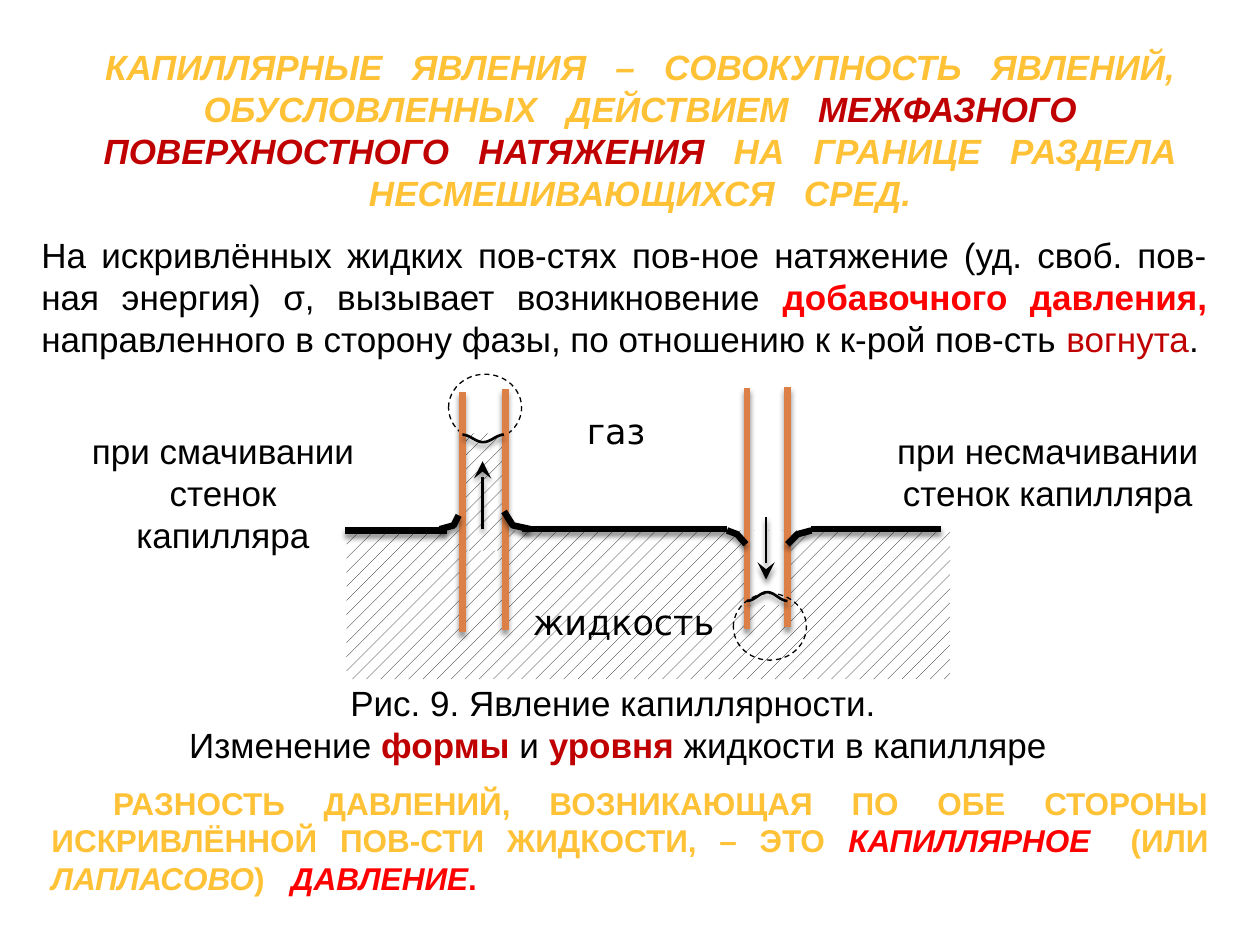
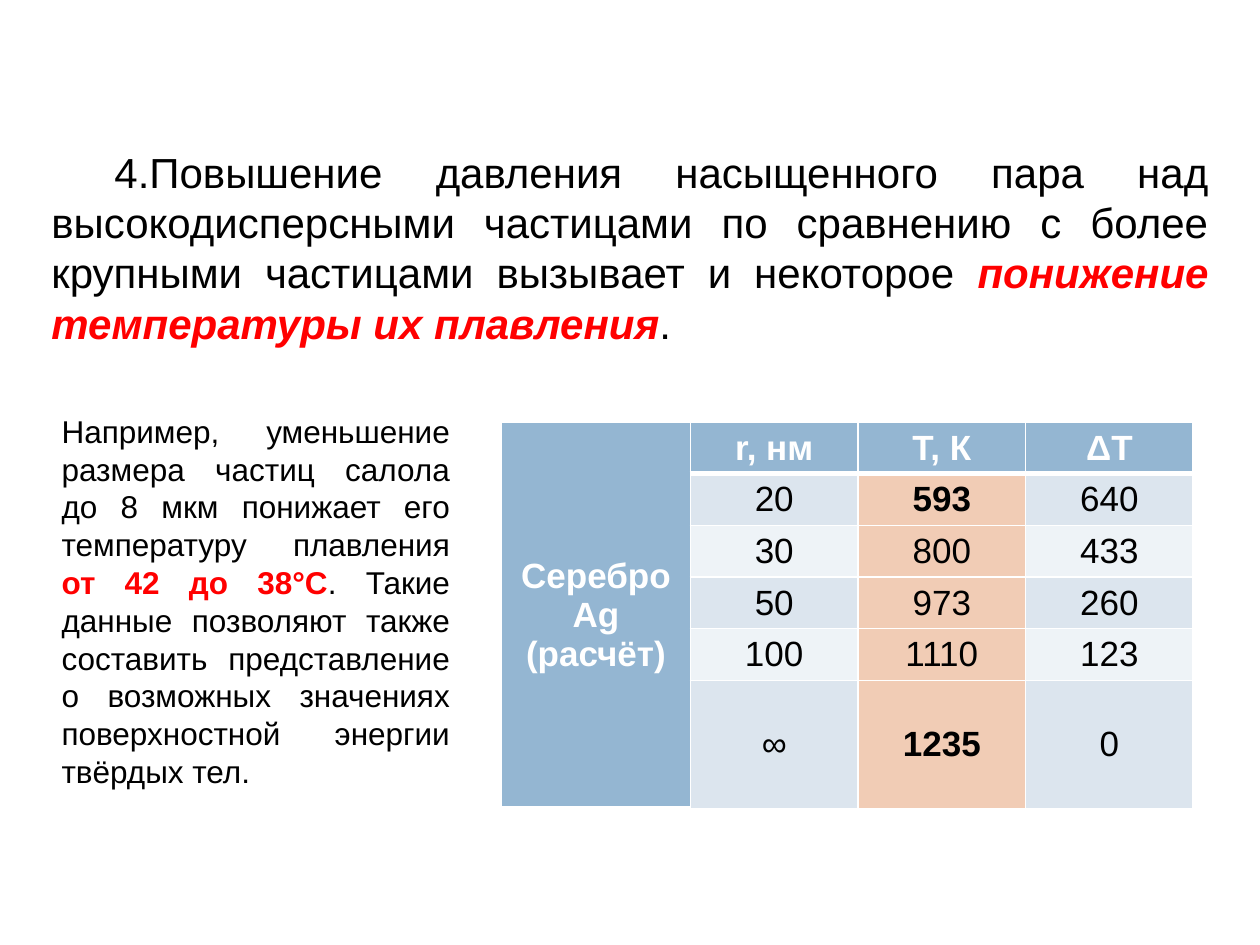
from math import pi, sin

from lxml.etree import SubElement
from pptx import Presentation
from pptx.dml.color import RGBColor
from pptx.enum.dml import MSO_LINE_DASH_STYLE as DASH, MSO_PATTERN_TYPE as PATTERN
from pptx.enum.shapes import MSO_CONNECTOR as CONNECTOR, MSO_SHAPE as SHAPE
from pptx.enum.text import MSO_ANCHOR as ANCHOR, MSO_AUTO_SIZE as AUTO_SIZE, PP_ALIGN as ALIGN
from pptx.oxml.ns import qn
from pptx.util import Emu, Pt

EMU_PER_PX = 9144  # 100 px to the inch
TITLE_ONLY, BLANK = 5, 6
WIDE_GAP = "_"  # stands for a space widened by character spacing

COLORS = {
    "black": "000000", "white": "FFFFFF", "gold": "FFC135",
    "red": "FF0000", "crimson": "C00000", "tube": "DD8047",
    "header": "94B6D2", "band": "DCE5EE", "light": "EEF3F7", "accent": "F1CCB5",
}

RUN_STYLES = {
    "plain": {"color": "black"},
    "strong": {"color": "black", "bold": True},
    "header": {"color": "white", "bold": True},
    "gold": {"color": "gold", "bold": True},
    "gold italic": {"color": "gold", "bold": True, "italic": True},
    "red": {"color": "red", "bold": True},
    "red italic": {"color": "red", "bold": True, "italic": True},
    "crimson": {"color": "crimson"},
    "crimson bold": {"color": "crimson", "bold": True},
    "crimson italic": {"color": "crimson", "bold": True, "italic": True},
}


def px(length):
    return Emu(round(length * EMU_PER_PX))


def rgb(name):
    return RGBColor.from_string(COLORS[name])


def apply(target, values):
    for name, value in values.items():
        setattr(target, name, value)


class SlideBuilder:
    """Holds the shared style and the slide being drawn."""

    font = "Arial"

    def __init__(self):
        self.presentation = Presentation()
        apply(self.presentation, {"slide_width": px(1000), "slide_height": px(750)})
        self.slide = None

    def new_slide(self, layout):
        layouts = self.presentation.slide_layouts
        self.slide = self.presentation.slides.add_slide(layouts[layout])

    def add_run(self, paragraph, text, style, size, font):
        run = paragraph.add_run()
        run.text = text
        values = dict(RUN_STYLES[style])
        run.font.color.rgb = rgb(values.pop("color"))
        apply(run.font, {"name": font, "size": Pt(size), **values})
        return run

    def fill_text(self, frame, runs, size=20, align=ALIGN.CENTER, font=font, indent=0, number=None):
        """Fill a text frame from (text, style) pairs; a newline text is a line break."""
        paragraph = frame.paragraphs[0]
        paragraph.alignment = align
        for text, style in runs:
            if text == "\n":
                paragraph.add_line_break()
                continue
            for index, piece in enumerate(text.split(WIDE_GAP)):
                if index:
                    gap = self.add_run(paragraph, " ", style, size, font)
                    gap.font._element.set("spc", str(round(size * 55.6)))
                if piece:
                    self.add_run(paragraph, piece, style, size, font)
        if indent:
            properties = paragraph._p.get_or_add_pPr()
            properties.set("marL", "0")
            properties.set("indent", str(px(indent)))
            if number:
                SubElement(properties, qn("a:buFont"), typeface=font)
                SubElement(properties, qn("a:buAutoNum"), type="arabicPeriod", startAt=str(number))

    def title(self, box, runs):
        shape = self.slide.shapes.title
        apply(shape, dict(zip(("left", "top", "width", "height"), map(px, box))))
        apply(shape.text_frame, {"word_wrap": True, "auto_size": AUTO_SIZE.NONE,
                                 "vertical_anchor": ANCHOR.TOP})
        self.fill_text(shape.text_frame, runs)

    def text(self, box, runs, **options):
        shape = self.slide.shapes.add_textbox(*map(px, box))
        shape.text_frame.word_wrap = True
        self.fill_text(shape.text_frame, runs, **options)

    def area(self, kind, box, fill=None, hatched=False, dashed=False):
        shape = self.slide.shapes.add_shape(kind, *map(px, box))
        shape.shadow.inherit = False
        if hatched:
            shape.fill.patterned()
            shape.fill.pattern = PATTERN.PERCENT_10
            shape.fill.fore_color.rgb = rgb("black")
            shape.fill.back_color.rgb = rgb("white")
        elif fill:
            shape.fill.solid()
            shape.fill.fore_color.rgb = rgb(fill)
        else:
            shape.fill.background()
        if dashed:
            shape.line.color.rgb = rgb("black")
            apply(shape.line, {"width": Pt(0.75), "dash_style": DASH.DASH})
        else:
            shape.line.fill.background()

    def stroke(self, shape, color, width, arrow=False):
        """Format a line with the soft shadow below it."""
        shape.line.color.rgb = rgb(color)
        shape.line.width = Pt(width)
        if arrow:
            SubElement(shape.line._get_or_add_ln(), qn("a:tailEnd"), type="stealth", w="lg", len="lg")
        effects = SubElement(shape._element.spPr, qn("a:effectLst"))
        shadow = SubElement(effects, qn("a:outerShdw"), blurRad=str(Pt(3)), dist=str(Pt(2.4)),
                            dir="5400000", rotWithShape="0")
        shade = SubElement(shadow, qn("a:srgbClr"), val=COLORS["black"])
        SubElement(shade, qn("a:alpha"), val="45000")

    def line(self, start, end, color="black", width=3.75, arrow=False):
        connector = self.slide.shapes.add_connector(
            CONNECTOR.STRAIGHT, *map(px, start + end))
        self.stroke(connector, color, width, arrow)

    def outline(self, points, width=3.75):
        start, *others = [(px(x), px(y)) for x, y in points]
        builder = self.slide.shapes.build_freeform(*start)
        builder.add_line_segments(others, close=False)
        shape = builder.convert_to_shape()
        shape.fill.background()
        self.stroke(shape, "black", width)

    def meniscus(self, left, right, edge, tip, steps=16):
        """Draw the curved liquid surface between two tube walls."""
        self.outline([(left + (right - left) * step / steps,
                       edge + (tip - edge) * sin(pi * step / steps) ** 2)
                      for step in range(steps + 1)], width=1.5)

    def cell(self, cell, fill, text="", style="plain", bottom=1):
        properties = cell._tc.get_or_add_tcPr()
        for side, width in (("L", 1), ("R", 1), ("T", 1), ("B", bottom)):
            border = SubElement(properties, qn(f"a:ln{side}"), w=str(Pt(width)))
            solid = SubElement(border, qn("a:solidFill"))
            SubElement(solid, qn("a:srgbClr"), val=COLORS["white"])
        cell.fill.solid()
        cell.fill.fore_color.rgb = rgb(fill)
        apply(cell, {"vertical_anchor": ANCHOR.MIDDLE, "margin_top": px(4), "margin_bottom": px(4)})
        if text:
            self.fill_text(cell.text_frame, [(text, style)])

    def table(self, box, widths, heights, side_header, header, rows, strong):
        """Draw a table whose first column is one merged header cell."""
        table = self.slide.shapes.add_table(len(heights), len(widths), *map(px, box)).table
        table.horz_banding = False
        for column, width in zip(table.columns, widths):
            column.width = px(width)
        for row, height in zip(table.rows, heights):
            row.height = px(height)
        table.cell(0, 0).merge(table.cell(len(rows), 0))
        for row_index, values in enumerate([header] + rows):
            is_header = row_index == 0
            self.cell(table.cell(row_index, 0), "header",
                      side_header if is_header else "", "header", bottom=3)
            for column_index, value in enumerate(values, 1):
                cell = table.cell(row_index, column_index)
                if is_header:
                    self.cell(cell, "header", value, "header", bottom=3)
                    continue
                band = "band" if row_index % 2 else "light"
                self.cell(cell, "accent" if column_index == 2 else band, value,
                          "strong" if value in strong else "plain")


def draw_capillaries(builder):
    builder.area(SHAPE.OVAL, (356, 297, 58, 53), fill="white", dashed=True)
    builder.area(SHAPE.RECTANGLE, (275, 421, 479, 118), hatched=True)
    for left, right, level in ((274, 355, 421), (414, 577, 420), (644, 747, 420)):
        builder.line((left, level), (right, level))

    builder.area(SHAPE.RECTANGLE, (593, 421, 32, 59), fill="white")
    builder.area(SHAPE.RECTANGLE, (365, 344, 36, 93), hatched=True)
    for wall, top in ((593, 308), (625, 307), (367, 311), (401, 309)):
        builder.line((wall, top), (wall, top + 191), color="tube")
    builder.meniscus(593, 625, edge=477, tip=470)
    builder.meniscus(367, 400, edge=345, tip=351)

    for label, box in (("жидкость", (401, 472, 188, 46)), ("газ", (445, 320, 88, 54))):
        builder.text(box, [(label, "plain")], font="DejaVu Sans")
    for bend in (
        [(400, 406), (407, 417), (421, 420)],
        [(577, 421), (585, 424), (592, 432)],
        [(625, 432), (633, 424), (644, 421)],
        [(349, 420), (360, 417), (364, 409)],
    ):
        builder.outline(bend)

    builder.area(SHAPE.OVAL, (582, 471, 58, 53), dashed=True)
    for x, start, end in ((383, 420, 366), (608, 410, 460)):
        builder.line((x, start), (x, end), width=1.5, arrow=True)
    for label, box in (("при смачивании стенок капилляра", (55, 336, 244, 77)),
                       ("при несмачивании стенок капилляра", (702, 336, 259, 77))):
        builder.text(box, [(label, "plain")])


def capillarity_slide(builder):
    builder.new_slide(TITLE_ONLY)
    builder.title((43, 31, 930, 145), [
        ("КАПИЛЛЯРНЫЕ_ЯВЛЕНИЯ_–_СОВОКУПНОСТЬ_ЯВЛЕНИЙ, ОБУСЛОВЛЕННЫХ_ДЕЙСТВИЕМ_", "gold italic"),
        ("МЕЖФАЗНОГО ПОВЕРХНОСТНОГО_НАТЯЖЕНИЯ", "crimson italic"),
        ("_НА_ГРАНИЦЕ_РАЗДЕЛА НЕСМЕШИВАЮЩИХСЯ_СРЕД.", "gold italic"),
    ])
    builder.text((23, 180, 945, 111), [
        ("На искривлённых жидких пов-стях пов-ное натяжение (уд. своб. пов-ная энергия) σ, "
         "вызывает возникновение ", "plain"),
        ("добавочного давления,", "red"),
        (" направленного в сторону фазы, по отношению к к-рой пов-сть ", "plain"),
        ("вогнута", "crimson"),
        (".", "plain"),
    ], align=ALIGN.JUSTIFY)
    draw_capillaries(builder)
    builder.text((40, 536, 901, 70), [
        ("Рис. 9. Явление капиллярности. ", "plain"),
        ("\n", "plain"),
        ("Изменение ", "plain"),
        ("формы", "crimson bold"),
        (" и ", "plain"),
        ("уровня", "crimson bold"),
        (" жидкости в капилляре", "plain"),
    ])
    builder.text((31, 617, 938, 101), [
        ("РАЗНОСТЬ ДАВЛЕНИЙ, ВОЗНИКАЮЩАЯ ПО ОБЕ СТОРОНЫ ИСКРИВЛЁННОЙ ПОВ-СТИ ЖИДКОСТИ, – ЭТО ",
         "gold"),
        ("КАПИЛЛЯРНОЕ_", "red italic"),
        ("(ИЛИ ", "gold"),
        ("ЛАПЛАСОВО", "gold italic"),
        (")_", "gold"),
        ("ДАВЛЕНИЕ", "red italic"),
        (".", "red"),
    ], size=18, align=ALIGN.JUSTIFY, indent=49)


def melting_slide(builder):
    builder.new_slide(BLANK)
    builder.table(
        (398, 335, 549, 307), widths=[150] + [133] * 3, heights=[41] * 5 + [102],
        side_header="Серебро Ag (расчёт)",
        header=["r, нм", "Т, К", "ΔТ"],
        rows=[["20", "593", "640"], ["30", "800", "433"], ["50", "973", "260"],
              ["100", "1110", "123"], ["∞", "1235", "0"]],
        strong={"593", "1235"})
    builder.text((31, 111, 938, 172), [
        ("Повышение давления насыщенного пара над высокодисперсными частицами по сравнению "
         "с более крупными частицами вызывает и некоторое ", "plain"),
        ("понижение температуры их плавления", "red italic"),
        (".", "plain"),
    ], size=24, align=ALIGN.JUSTIFY, indent=50, number=4)
    builder.text((39, 322, 328, 313), [
        ("Например, уменьшение размера частиц салола до 8 мкм понижает его температуру "
         "плавления ", "plain"),
        ("от 42 до 38°С", "red"),
        (". Такие данные позволяют также составить представление о возможных значениях "
         "поверхностной энергии твёрдых тел.", "plain"),
    ], size=18, align=ALIGN.JUSTIFY)


def main():
    builder = SlideBuilder()
    capillarity_slide(builder)
    melting_slide(builder)
    builder.presentation.save("out.pptx")


if __name__ == "__main__":
    main()
